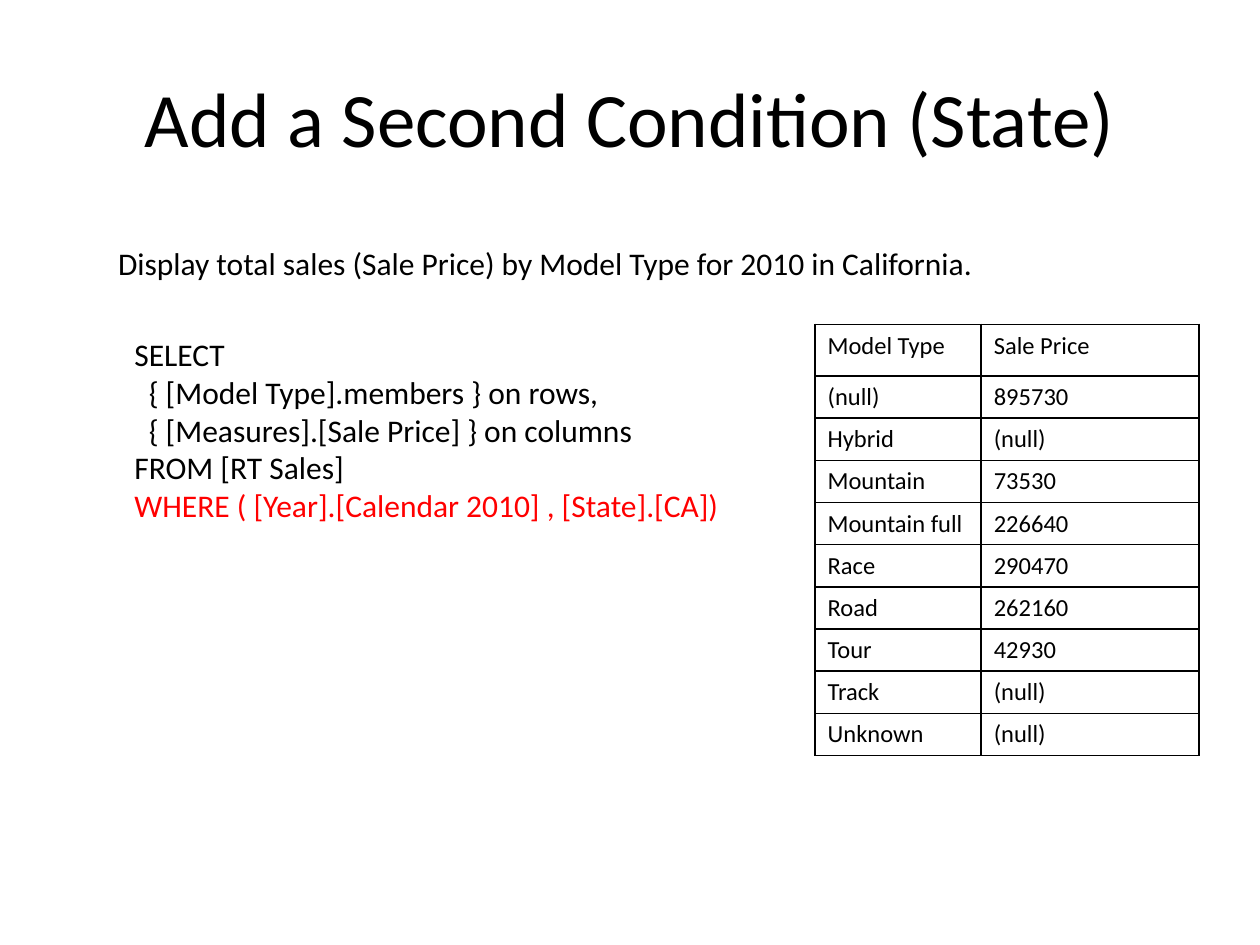
from lxml.etree import SubElement
from pptx import Presentation
from pptx.dml.color import RGBColor
from pptx.enum.text import MSO_ANCHOR, MSO_AUTO_SIZE, PP_ALIGN
from pptx.oxml.ns import qn
from pptx.util import Cm, Pt

BLACK = RGBColor(0x00, 0x00, 0x00)
RED = RGBColor(0xFF, 0x00, 0x00)

QUERY_LINES = [
    ("SELECT", {}),
    ("{ [Model Type].members } on rows,", {"indent": Cm(0.29)}),
    ("{ [Measures].[Sale Price] } on columns", {"indent": Cm(0.29)}),
    ("FROM [RT Sales]", {}),
    ("WHERE ( [Year].[Calendar 2010] , [State].[CA])", {"color": RED}),
]

SALES = [
    ("Model Type", "Sale Price"),
    ("(null)", "895730"),
    ("Hybrid", "(null)"),
    ("Mountain", "73530"),
    ("Mountain full", "226640"),
    ("Race", "290470"),
    ("Road", "262160"),
    ("Tour", "42930"),
    ("Track", "(null)"),
    ("Unknown", "(null)"),
]


def write(paragraph, text, size=18, color=BLACK, font="Calibri",
          align=PP_ALIGN.LEFT, indent=0):
    paragraph.alignment = align
    if indent:
        paragraph._p.get_or_add_pPr().set("marL", str(indent))
    run = paragraph.add_run()
    run.text = text
    run.font.name = font
    run.font.size = Pt(size)
    run.font.color.rgb = color


def add_borders(cell, color=BLACK, width=Pt(1)):
    properties = cell._tc.get_or_add_tcPr()
    for position, side in enumerate(("a:lnL", "a:lnR", "a:lnT", "a:lnB")):
        line = properties.makeelement(qn(side), {"w": str(width)})
        fill = SubElement(line, qn("a:solidFill"))
        SubElement(fill, qn("a:srgbClr"), val=str(color))
        properties.insert(position, line)


class SlideBuilder:
    def __init__(self, presentation):
        self.slide = presentation.slides.add_slide(presentation.slide_layouts[5])

    def title(self, text, left, top, width, height):
        shape = self.slide.shapes.title
        shape.left, shape.top, shape.width, shape.height = left, top, width, height
        shape.text_frame.vertical_anchor = MSO_ANCHOR.MIDDLE
        write(shape.text_frame.paragraphs[0], text, size=44, align=PP_ALIGN.CENTER)

    def text_box(self, lines, left, top, width, height):
        """Add one paragraph for each (text, format) pair in lines."""
        frame = self.slide.shapes.add_textbox(left, top, width, height).text_frame
        frame.word_wrap = False
        frame.auto_size = MSO_AUTO_SIZE.SHAPE_TO_FIT_TEXT
        for number, (text, style) in enumerate(lines):
            paragraph = frame.add_paragraph() if number else frame.paragraphs[0]
            write(paragraph, text, **style)

    def table(self, rows, left, top, column_widths, header_height, row_height):
        height = header_height + row_height * (len(rows) - 1)
        table = self.slide.shapes.add_table(
            len(rows), len(column_widths), left, top, sum(column_widths), height
        ).table
        table.first_row = table.horz_banding = False
        for column, width in zip(table.columns, column_widths):
            column.width = width
        for number, (row, values) in enumerate(zip(table.rows, rows)):
            row.height = row_height if number else header_height
            for cell, value in zip(row.cells, values):
                cell.fill.background()
                add_borders(cell)
                write(cell.text_frame.paragraphs[0], value, size=14)


def main():
    presentation = Presentation()
    presentation.slide_width, presentation.slide_height = Cm(25.4), Cm(19.05)
    builder = SlideBuilder(presentation)
    builder.title("Add a Second Condition (State)",
                  Cm(1.27), Cm(0.76), Cm(22.86), Cm(3.18))
    builder.text_box(QUERY_LINES, Cm(2.46), Cm(6.63), Cm(12.42), Cm(4.11))
    builder.text_box(
        [("Display total sales (Sale Price) by Model Type for 2010 in California.", {})],
        Cm(2.13), Cm(4.8), Cm(17.93), Cm(1.03))
    builder.table(SALES, Cm(16.43), Cm(6.54), [Cm(3.35), Cm(4.39)],
                  header_height=Cm(1.04), row_height=Cm(0.85))
    presentation.save("out.pptx")


if __name__ == "__main__":
    main()
